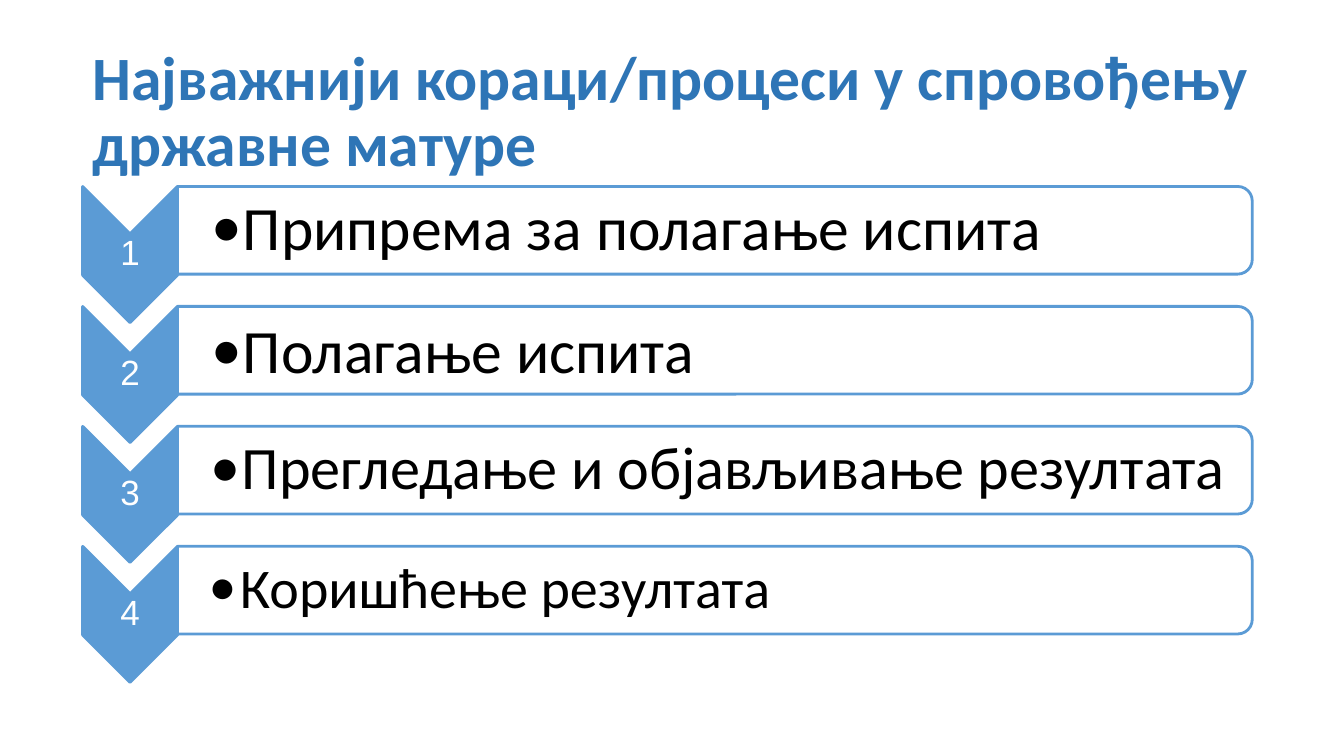
from dataclasses import dataclass

import pptx
import pptx.util
import pptx.dml.color
import pptx.enum.shapes
import pptx.enum.text
from lxml import etree
from pptx.oxml.ns import qn

Inches = pptx.util.Inches
Pt = pptx.util.Pt
Shapes = pptx.enum.shapes.MSO_SHAPE
Align = pptx.enum.text.PP_ALIGN


@dataclass(frozen=True)
class Theme:
    title_color: str = "2E75B6"
    accent: str = "5B9BD5"
    light: str = "FFFFFF"
    text: str = "000000"
    body_font: str = "Calibri"
    number_font: str = "Arial"
    title_size: int = 44
    number_size: int = 25
    outline: int = 2
    line_spacing: float = 0.9


THEME = Theme()
TITLE = "Најважнији кораци/процеси у спровођењу државне матуре"
STEPS = [
    ("Припрема за полагање испита", 44, 0.34, 0),
    ("Полагање испита", 44, 0.34, 0.03),
    ("Прегледање и објављивање резултата", 43, 0.33, 0),
    ("Коришћење резултата", 40, 0.31, 0),
]
STEP_PITCH = 1.19


def color(code):
    return pptx.dml.color.RGBColor.from_string(code)


def add_text(page, box, text, font, size, ink, inset=0, left_inset=0,
             align=Align.LEFT, bold=False, bullet_indent=0):
    holder = page.shapes.add_textbox(*map(Inches, box))
    frame = holder.text_frame
    frame.word_wrap = True
    frame.vertical_anchor = pptx.enum.text.MSO_ANCHOR.MIDDLE
    frame.margin_left = Inches(left_inset)
    frame.margin_right = frame.margin_top = frame.margin_bottom = Inches(inset)
    frame.text = text
    para = frame.paragraphs[0]
    para.alignment = align
    para.line_spacing = THEME.line_spacing
    if bullet_indent:
        properties = para._p.get_or_add_pPr()
        properties.set("marL", str(Inches(bullet_indent)))
        properties.set("indent", str(-Inches(bullet_indent)))
        etree.SubElement(properties, qn("a:buFont"), typeface=THEME.body_font)
        etree.SubElement(properties, qn("a:buChar"), char="•")
    span = para.runs[0]
    span.font.name = font
    span.font.size = Pt(size)
    span.font.bold = bold
    span.font.color.rgb = color(ink)


def add_turned_shape(page, kind, box, fill, opacity=100):
    left, top, width, height = box
    shift = (width - height) / 2
    shape = page.shapes.add_shape(
        kind, *map(Inches, (left + shift, top - shift, height, width)))
    shape.rotation = 90
    shape.shadow.inherit = False
    shape.fill.solid()
    shape.fill.fore_color.rgb = color(fill)
    if opacity < 100:
        tint = shape._element.spPr.find(qn("a:solidFill"))[0]
        etree.SubElement(tint, qn("a:alpha"), val=str(opacity * 1000))
    shape.line.color.rgb = color(THEME.accent)
    shape.line.width = Pt(THEME.outline)


def add_title(page, box):
    add_text(page, box, TITLE, THEME.body_font, THEME.title_size,
             THEME.title_color, bold=True)


def add_step(page, box, number, step):
    left, top, width, height = box
    label, size, left_inset, drop = step
    chevron_width = 0.94
    bar_left = left + chevron_width
    bar_width = width - chevron_width
    add_turned_shape(page, Shapes.CHEVRON,
                     (left, top, chevron_width, height), THEME.accent)
    add_text(page, (left, top + 0.47, chevron_width, 0.4), str(number),
             THEME.number_font, THEME.number_size, THEME.light,
             inset=0.02, left_inset=0.02, align=Align.CENTER)
    add_turned_shape(page, Shapes.ROUND_2_SAME_RECTANGLE,
                     (bar_left, top, bar_width, 0.87), THEME.light, 90)
    add_text(page, (bar_left, top + 0.04 + drop, bar_width - 0.05, 0.79),
             label, THEME.body_font, size, THEME.text,
             inset=0.03, left_inset=left_inset, bullet_indent=0.31)


def add_steps(page, box):
    left, top, width, height = box
    for index, step in enumerate(STEPS):
        step_height = height - STEP_PITCH * (len(STEPS) - 1)
        add_step(page, (left, top + index * STEP_PITCH, width, step_height),
                 index + 1, step)


def main():
    deck = pptx.Presentation()
    deck.slide_width = Inches(13.33)
    deck.slide_height = Inches(7.5)
    page = deck.slides.add_slide(deck.slide_layouts[6])
    add_title(page, (0.92, 0.4, 11.5, 1.45))
    add_steps(page, (0.82, 1.85, 11.6, 4.92))
    deck.save("out.pptx")


if __name__ == "__main__":
    main()
